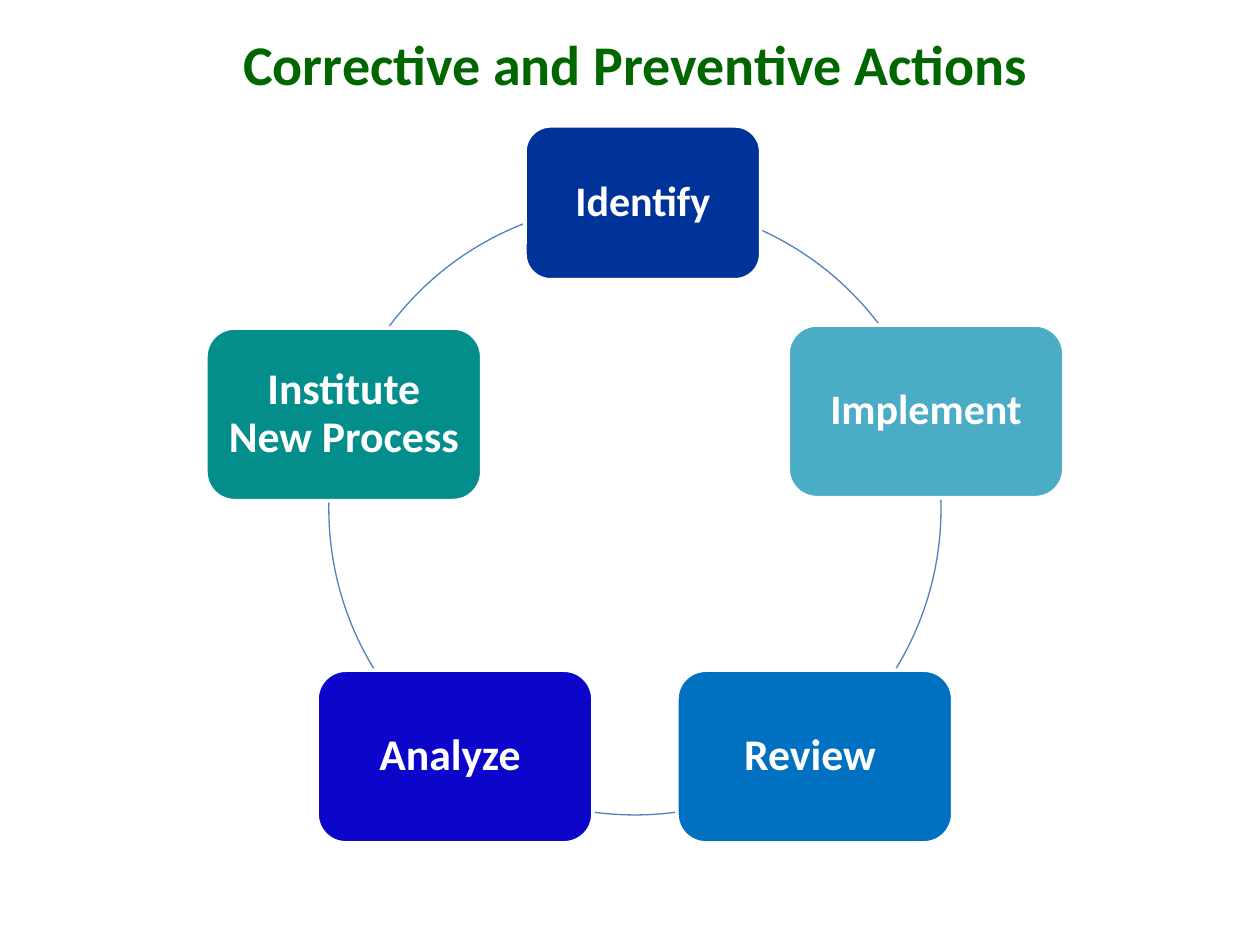
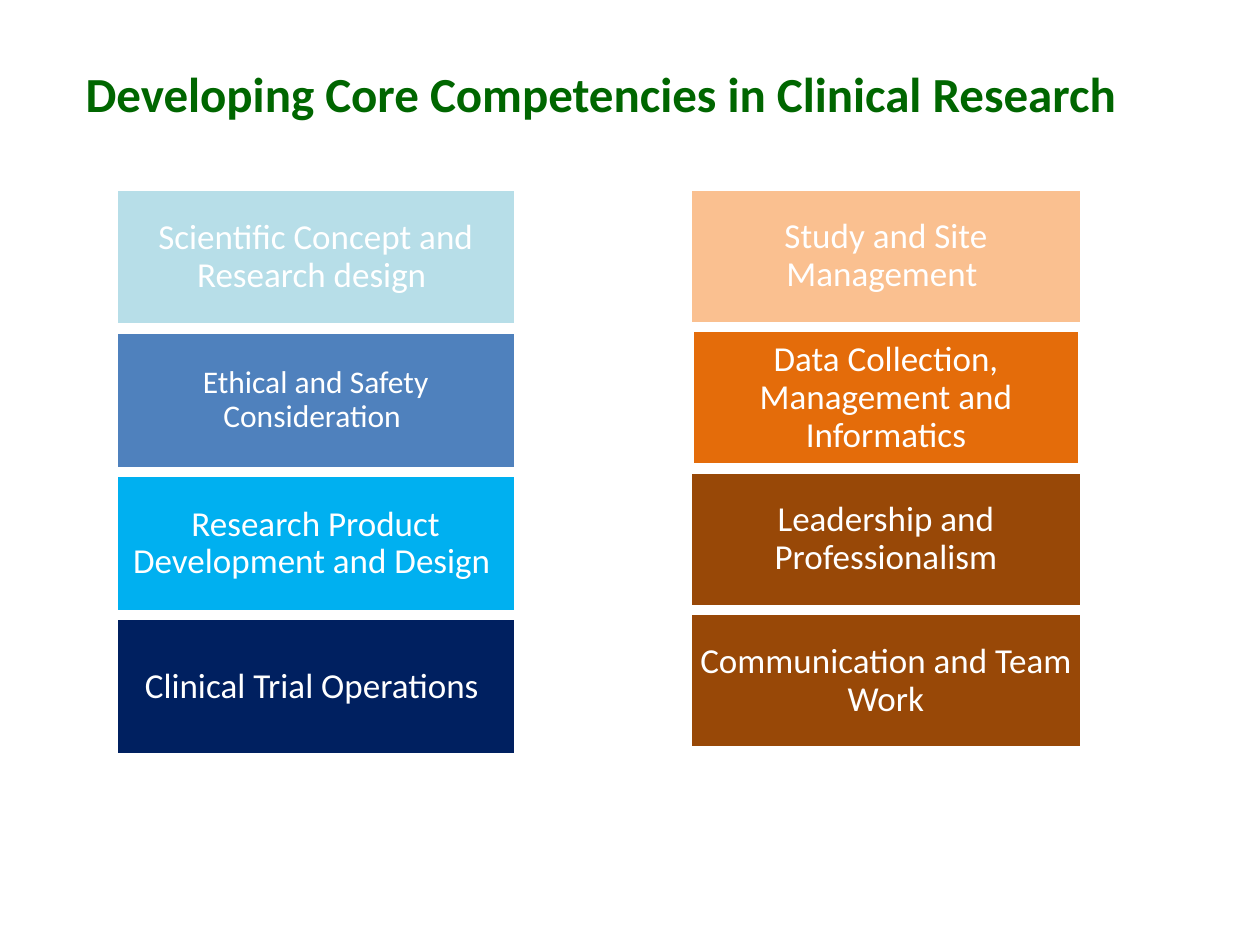
from dataclasses import dataclass
from math import cos, radians, sin

from pptx import Presentation
from pptx.dml.color import RGBColor
from pptx.enum.shapes import MSO_SHAPE
from pptx.enum.text import MSO_ANCHOR, MSO_AUTO_SIZE, PP_ALIGN
from pptx.util import Cm, Pt


@dataclass(frozen=True)
class Theme:
    """Hold the colours and type sizes that the slides share."""
    font: str = "Calibri"
    title: str = "006600"
    paper: str = "FFFFFF"
    ring: str = "4F81BD"
    edge: float = 2
    thin: float = 0.75
    head: int = 32
    subhead: int = 28
    step: int = 25
    short: int = 24
    skill: int = 20
    small: int = 18


@dataclass(frozen=True)
class Box:
    """Describe a rectangle in centimetres."""
    left: float
    top: float
    width: float
    height: float

    def emu(self):
        """Return the four lengths for python-pptx."""
        return [Cm(n) for n in (self.left, self.top, self.width, self.height)]


@dataclass(frozen=True)
class Card:
    """Describe one labelled card and its shift or trim in centimetres."""
    text: str
    fill: str
    size: int
    width: float = 5.56
    height: float = 3.48
    right: float = 0
    down: float = 0
    trim: float = 0


THEME = Theme()
STEPS = [
    Card("Identify", "003399", THEME.short, 4.75, 3.1, right=0.16),
    Card("Implement", "4BACC6", THEME.short, down=-0.06),
    Card("Review ", "0070C0", THEME.step),
    Card("Analyze ", "0E05CB", THEME.step),
    Card("Institute New Process ", "048E8B", THEME.step),
]
ARCS = [(294.5, 322.8), (358.3, 31.5), (82.2, 97.6), (148.5, 181.2), (216.6, 248.6)]
SCIENCE = [
    Card("Scientific Concept and Research design ", "B7DEE8", THEME.skill),
    Card("Ethical and Safety Consideration ", "4F81BD", THEME.small),
    Card("Research Product Development and Design ", "00B0F0", THEME.skill),
    Card("Clinical Trial Operations ", "002060", THEME.skill),
]
PEOPLE = [
    Card("Study and Site Management ", "FAC090", THEME.skill),
    Card("Data Collection, Management and Informatics", "E46C0A", THEME.skill, trim=0.04),
    Card("Leadership and Professionalism", "984807", THEME.skill),
    Card("Communication and Team Work", "984807", THEME.skill),
]


def color(code):
    """Turn a hex code into a colour."""
    return RGBColor.from_string(code)


def write(frame, text, size, ink, bold, align):
    """Set the text of a frame and format its paragraph and run."""
    frame.text = text
    frame.word_wrap = True
    frame.auto_size = MSO_AUTO_SIZE.NONE
    frame.vertical_anchor = MSO_ANCHOR.MIDDLE
    line = frame.paragraphs[0]
    line.alignment = align
    font = line.runs[0].font
    font.name, font.size, font.bold = THEME.font, Pt(size), bold
    font.color.rgb = color(ink)
    return line


def add_title(slide, box, text, size, align):
    """Move the title placeholder into the box and fill it."""
    title = slide.shapes.title
    title.left, title.top, title.width, title.height = box.emu()
    write(title.text_frame, text, size, THEME.title, True, align)


def add_card(slide, box, card, kind, inset, bold):
    """Draw a filled card with a white edge and a centred label."""
    shape = slide.shapes.add_shape(kind, *box.emu())
    shape.shadow.inherit = False
    shape.fill.solid()
    shape.fill.fore_color.rgb = color(card.fill)
    shape.line.color.rgb = color(THEME.paper)
    shape.line.width = Pt(THEME.edge)
    frame = shape.text_frame
    frame.margin_left = frame.margin_right = Cm(inset)
    frame.margin_top = frame.margin_bottom = Cm(inset)
    line = write(frame, card.text, card.size, THEME.paper, bold, PP_ALIGN.CENTER)
    line.line_spacing = 0.9


def add_arc(slide, box, start, end):
    """Draw a thin clockwise arc between two angles in degrees."""
    arc = slide.shapes.add_shape(MSO_SHAPE.ARC, *box.emu())
    arc.shadow.inherit = False
    arc.fill.background()
    arc.line.color.rgb = color(THEME.ring)
    arc.line.width = Pt(THEME.thin)
    arc.adjustments[0] = start * 0.6
    arc.adjustments[1] = end * 0.6


def add_cycle(slide, box, steps, arcs):
    """Place the steps evenly on the circle that fills the box."""
    radius = box.width / 2
    for start, end in arcs:
        add_arc(slide, box, start, end)
    for i, step in enumerate(steps):
        turn = radians(360 * i / len(steps) - 90)
        x = box.left + radius * (1 + cos(turn)) + step.right
        y = box.top + radius * (1 + sin(turn)) + step.down
        spot = Box(x - step.width / 2, y - step.height / 2, step.width, step.height)
        add_card(slide, spot, step, MSO_SHAPE.ROUNDED_RECTANGLE, 0.25, True)


def add_stack(slide, box, cards, gap=0.14):
    """Stack the cards in the box with equal gaps."""
    tall = (box.height - gap * (len(cards) - 1)) / len(cards)
    for i, card in enumerate(cards):
        spot = Box(box.left + card.trim, box.top + i * (tall + gap),
                   box.width - 2 * card.trim, tall)
        add_card(slide, spot, card, MSO_SHAPE.RECTANGLE, 0.14, False)


def add_slide(deck):
    """Add a slide with only a title."""
    return deck.slides.add_slide(deck.slide_layouts.get_by_name("Title Only"))


def show_cycle(deck):
    """Build the slide with the cycle of actions."""
    slide = add_slide(deck)
    add_title(slide, Box(4.65, 0.45, 16.59, 1.63),
              "Corrective and Preventive Actions", THEME.head, PP_ALIGN.LEFT)
    add_cycle(slide, Box(6.63, 4.09, 12.34, 12.34), STEPS, ARCS)


def show_skills(deck):
    """Build the slide with the two stacks of competencies."""
    slide = add_slide(deck)
    add_title(slide, Box(1.27, 0.03, 21.9, 3.68),
              "Developing Core Competencies in Clinical Research ",
              THEME.subhead, PP_ALIGN.CENTER)
    add_stack(slide, Box(2.34, 3.81, 8.05, 11.41), SCIENCE)
    add_stack(slide, Box(13.92, 3.81, 7.88, 11.27), PEOPLE)


def main():
    """Build and save the deck."""
    deck = Presentation()
    deck.slide_width, deck.slide_height = Cm(25.4), Cm(19.05)
    show_cycle(deck)
    show_skills(deck)
    deck.save("out.pptx")


if __name__ == "__main__":
    main()
